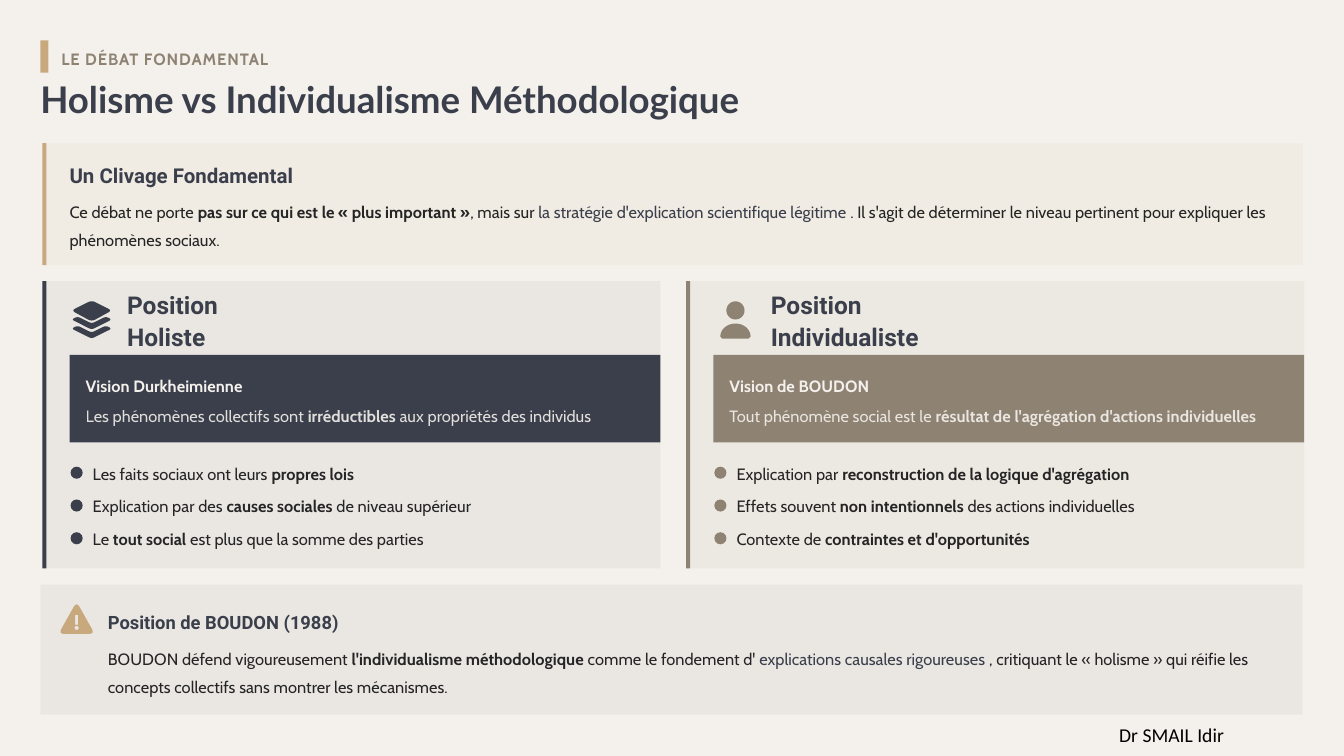
import math
from pptx import Presentation
from pptx.dml.color import RGBColor
from pptx.enum import shapes, text
from pptx.oxml import ns
from pptx.util import Inches, Pt
from lxml import etree

# Content: a string is plain, a tuple is (words, emphasis)
KICKER = "LE DÉBAT FONDAMENTAL"
TITLE = "Holisme vs Individualisme Méthodologique"
DIVIDE_TITLE = "Un Clivage Fondamental"
DIVIDE_BODY = [
    "Ce débat ne porte ", ("pas sur ce qui est le « plus important »", "bold"),
    ", mais sur ", ("la stratégie d'explication scientifique légitime ", "accent"),
    ". Il s'agit de déterminer le niveau pertinent pour expliquer les phénomènes sociaux."]
POSITIONS = [
    {"heading": "Position Holiste", "heading_width": 1.65, "color": "navy", "tint": 5,
     "vision": "Vision Durkheimienne",
     "thesis": ["Les phénomènes collectifs sont ", ("irréductibles", "bold"),
                " aux propriétés des individus"],
     "points": [
         ["Les faits sociaux ont leurs ", ("propres lois", "bold")],
         ["Explication par des ", ("causes sociales", "bold"), " de niveau supérieur"],
         ["Le ", ("tout social", "bold"), " est plus que la somme des parties"]]},
    {"heading": "Position Individualiste", "heading_width": 2.27, "color": "taupe", "tint": 8,
     "vision": "Vision de BOUDON",
     "thesis": ["Tout phénomène social est le ",
                ("résultat de l'agrégation d'actions individuelles", "bold")],
     "points": [
         ["Explication par ", ("reconstruction de la logique d'agrégation", "bold")],
         ["Effets souvent ", ("non intentionnels", "bold"), " des actions individuelles"],
         ["Contexte de ", ("contraintes et d'opportunités", "bold")]]},
]
BOUDON_TITLE = "Position de BOUDON (1988)"
BOUDON_BODY = [
    "BOUDON défend vigoureusement ", ("l'individualisme méthodologique", "bold"),
    " comme le fondement d'", (" explications causales rigoureuses ", "accent"),
    ", critiquant le « holisme » qui réifie les concepts collectifs sans montrer les mécanismes."]
AUTHOR = "Dr SMAIL Idir"

THEME = {
    "colors": {"paper": "F4F1EC", "navy": "3A3F4B", "taupe": "8E8273",
               "gold": "C8A97E", "ink": "252525", "black": "000000"},
    # style: font, size, bold, colour, line spacing
    "styles": {
        "kicker": ("Cabin", 11.7, True, "taupe", 1.3),
        "title": ("Lato", 26.2, True, "navy", 0.9),
        "section": ("Roboto", 14.6, True, "navy", 1.2),
        "position": ("Roboto", 17.5, True, "navy", 1.1),
        "note": ("Roboto", 13.1, True, "navy", 1.3),
        "vision": ("Cabin", 11.7, True, "paper", 1.3),
        "thesis": ("Cabin", 11.7, False, "paper", 1.4),
        "body": ("Cabin", 11.7, False, "ink", 1.4),
        "point": ("Cabin", 11.7, False, "ink", 1.3),
        "author": ("Calibri", 14, False, "black", 1.3)},
}
RECT, OVAL = shapes.MSO_SHAPE.RECTANGLE, shapes.MSO_SHAPE.OVAL


def rgb(name):
    return RGBColor.from_string(THEME["colors"][name])


def set_opacity(element, percent):
    for color in element.iter(ns.qn("a:srgbClr")):
        etree.SubElement(color, ns.qn("a:alpha")).set("val", str(percent * 1000))


def paint(shape, color, opacity=100):
    shape.shadow.inherit = False
    shape.fill.solid()
    shape.fill.fore_color.rgb = rgb(color)
    shape.line.fill.background()
    if opacity < 100:
        set_opacity(shape.element.spPr, opacity)


def add_block(x, y, w, h, color, opacity=100, kind=RECT):
    paint(slide.shapes.add_shape(kind, Inches(x), Inches(y), Inches(w), Inches(h)),
          color, opacity)


def add_text(x, y, w, h, style, parts, opacity=100, tracking=None):
    font, size, bold, color, spacing = THEME["styles"][style]
    frame = slide.shapes.add_textbox(Inches(x), Inches(y), Inches(w), Inches(h)).text_frame
    frame.word_wrap = True
    frame.vertical_anchor = text.MSO_ANCHOR.MIDDLE
    frame.margin_left = frame.margin_right = frame.margin_top = frame.margin_bottom = 0
    line = frame.paragraphs[0]
    line.line_spacing = spacing
    for part in [parts] if isinstance(parts, str) else parts:
        words, emphasis = (part, "") if isinstance(part, str) else part
        run = line.add_run()
        run.text = words
        run.font.name, run.font.size = font, Pt(size)
        run.font.bold = bold or emphasis == "bold"
        run.font.color.rgb = rgb("navy" if emphasis == "accent" else color)
        if opacity < 100:
            set_opacity(run.font.fill._xPr, opacity)
        if tracking:
            run.font._element.set("spc", str(tracking))


def rounded(corners, radius):
    """Outline of a polygon whose corners are softened by quadratic curves."""
    outline = []
    for i, (x, y) in enumerate(corners):
        ends = []
        for nx, ny in (corners[i - 1], corners[(i + 1) % len(corners)]):
            share = min(0.5, radius / math.hypot(nx - x, ny - y))
            ends.append((x + (nx - x) * share, y + (ny - y) * share))
        (ax, ay), (bx, by) = ends
        for t in (0, 0.25, 0.5, 0.75, 1):
            p, q, r = (1 - t) ** 2, 2 * t * (1 - t), t * t
            outline.append((p * ax + q * x + r * bx, p * ay + q * y + r * by))
    return outline


def ellipse(cx, cy, rx, ry, start=0, sweep=360):
    angles = [math.radians(start + sweep * i / 32) for i in range(33)]
    return [(cx + rx * math.cos(a), cy + ry * math.sin(a)) for a in angles]


def add_icon(outlines, color):
    contours = [[(Inches(x), Inches(y)) for x, y in o] for o in outlines]
    builder = slide.shapes.build_freeform(*contours[0][0])
    builder.add_line_segments(contours[0][1:])
    for contour in contours[1:]:
        builder.move_to(*contour[0])
        builder.add_line_segments(contour[1:])
    paint(builder.convert_to_shape(), color)


def layers_icon(cx):
    top = [(cx, 2.98), (cx + 0.2, 3.08), (cx, 3.19), (cx - 0.2, 3.08)]
    outlines = [rounded(top, 0.04)]
    for y in (3.17, 3.26):
        sheet = [(cx - 0.2, y), (cx - 0.14, y - 0.03), (cx, y + 0.04),
                 (cx + 0.14, y - 0.03), (cx + 0.2, y), (cx, y + 0.1)]
        outlines.append(rounded(sheet, 0.03))
    return outlines


def person_icon(cx):
    shoulders = ellipse(cx, 3.34, 0.15, 0.13, 180, 180)
    return [ellipse(cx, 3.08, 0.09, 0.09),
            shoulders + [(cx + 0.13, 3.36), (cx - 0.13, 3.36)]]


def warning_icon(cx):
    return [rounded([(cx, 5.97), (cx + 0.18, 6.29), (cx - 0.18, 6.29)], 0.06),
            rounded([(cx - 0.015, 6.1), (cx + 0.015, 6.1),
                     (cx + 0.015, 6.2), (cx - 0.015, 6.2)], 0.01),
            ellipse(cx, 6.23, 0.02, 0.02)]


deck = Presentation()
deck.slide_width, deck.slide_height = Inches(13.33), Inches(7.5)
slide = deck.slides.add_slide(deck.slide_layouts[6])
slide.background.fill.solid()
slide.background.fill.fore_color.rgb = rgb("paper")

# Header
add_block(0.4, 0.4, 0.08, 0.32, "gold")
add_text(0.61, 0.44, 2.4, 0.24, "kicker", KICKER, tracking=60)
add_text(0.4, 0.81, 12.5, 0.4, "title", TITLE)

# The divide
add_block(0.42, 1.42, 12.5, 1.21, "gold", 8)
add_block(0.42, 1.42, 0.04, 1.21, "gold")
add_text(0.69, 1.58, 12, 0.28, "section", DIVIDE_TITLE)
add_text(0.69, 1.94, 12.1, 0.53, "body", DIVIDE_BODY)

# The two positions
CARD_LEFT, CARD_STEP, POINT_STEP = 0.42, 6.385, 0.325
for column, (position, icon) in enumerate(zip(POSITIONS, (layers_icon, person_icon))):
    x, color = CARD_LEFT + column * CARD_STEP, position["color"]
    add_block(x, 2.79, 6.13, 2.85, color, position["tint"])
    add_block(x, 2.79, 0.04, 2.85, color)
    add_icon(icon(x + 0.49), color)
    add_text(x + 0.84, 3.01, position["heading_width"], 0.32, "position", position["heading"])
    add_block(x + 0.27, 3.52, 5.86, 0.87, color)
    add_text(x + 0.43, 3.68, 5.62, 0.24, "vision", position["vision"])
    add_text(x + 0.43, 3.96, 5.62, 0.26, "thesis", position["thesis"], 90)
    for row, point in enumerate(position["points"]):
        y = 4.55 + row * POINT_STEP
        add_block(x + 0.28, y + 0.08, 0.12, 0.12, color, kind=OVAL)
        add_text(x + 0.5, y, 5.5, 0.24, "point", point)

# Boudon's position and author
add_block(0.4, 5.8, 12.52, 1.29, "navy", 5)
add_icon(warning_icon(0.76), "gold")
add_text(1.07, 6, 11.76, 0.28, "note", BOUDON_TITLE)
add_text(1.07, 6.37, 11.75, 0.53, "body", BOUDON_BODY)
add_text(11.1, 7.11, 1.91, 0.29, "author", AUTHOR)

deck.save("out.pptx")
